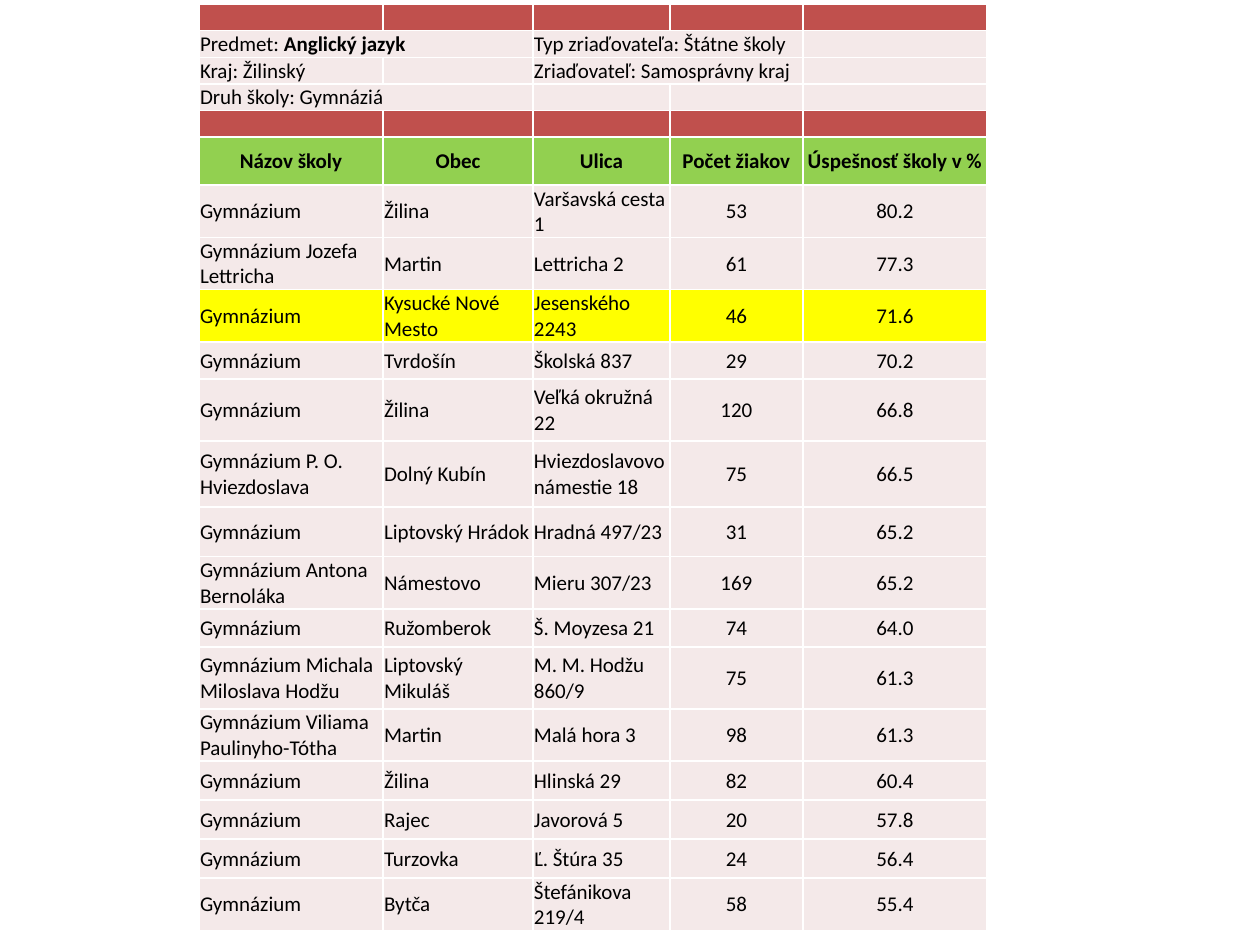
from dataclasses import dataclass

from lxml.etree import SubElement
from pptx import Presentation
from pptx.dml.color import RGBColor
from pptx.enum.text import MSO_ANCHOR, PP_ALIGN
from pptx.oxml import parse_xml
from pptx.oxml.ns import nsdecls, qn
from pptx.util import Pt

PX = 914400 // 126


@dataclass(frozen=True)
class Theme:
    font: str = "Calibri"
    size: int = 12
    text: str = "000000"
    band: str = "C0504D"
    header: str = "92D050"
    body: str = "F4E9E9"
    highlight: str = "FFFF00"
    border: str = "FFFFFF"
    border_width: int = 1


THEME = Theme()
SLIDE_WIDTH, SLIDE_HEIGHT = 1260, 945
TABLE_LEFT, TABLE_TOP = 199, 4
COLUMN_WIDTHS = [184, 150, 137, 133, 184]
INFO_HEIGHT, HEADER_HEIGHT = 25, 48

# Each entry: column, columns spanned, label, bold value
INFO_ROWS = [
    [(0, 2, "Predmet: ", "Anglický jazyk"),
     (2, 2, "Typ zriaďovateľa: Štátne školy", "")],
    [(0, 1, "Kraj: Žilinský", ""),
     (2, 2, "Zriaďovateľ: Samosprávny kraj", "")],
    [(0, 2, "Druh školy: Gymnáziá", "")],
]
HEADERS = ["Názov školy", "Obec", "Ulica", "Počet žiakov", "Úspešnosť školy v %"]

# Each entry: row height, then the cells
SCHOOLS = [
    (51, "Gymnázium", "Žilina", "Varšavská cesta 1", "53", "80.2"),
    (51, "Gymnázium Jozefa Lettricha", "Martin", "Lettricha 2", "61", "77.3"),
    (51, "Gymnázium", "Kysucké Nové Mesto", "Jesenského 2243", "46", "71.6"),
    (37, "Gymnázium", "Tvrdošín", "Školská 837", "29", "70.2"),
    (62, "Gymnázium", "Žilina", "Veľká okružná 22", "120", "66.8"),
    (66, "Gymnázium P. O. Hviezdoslava", "Dolný Kubín",
     "Hviezdoslavovo námestie 18", "75", "66.5"),
    (50, "Gymnázium", "Liptovský Hrádok", "Hradná 497/23", "31", "65.2"),
    (51, "Gymnázium Antona Bernoláka", "Námestovo", "Mieru 307/23", "169", "65.2"),
    (38, "Gymnázium", "Ružomberok", "Š. Moyzesa 21", "74", "64.0"),
    (62, "Gymnázium Michala Miloslava Hodžu", "Liptovský Mikuláš",
     "M. M. Hodžu 860/9", "75", "61.3"),
    (51, "Gymnázium Viliama Paulinyho-Tótha", "Martin", "Malá hora 3", "98", "61.3"),
    (39, "Gymnázium", "Žilina", "Hlinská 29", "82", "60.4"),
    (39, "Gymnázium", "Rajec", "Javorová 5", "20", "57.8"),
    (39, "Gymnázium", "Turzovka", "Ľ. Štúra 35", "24", "56.4"),
    (51, "Gymnázium", "Bytča", "Štefánikova 219/4", "58", "55.4"),
]
HIGHLIGHTED_TOWN = "Kysucké Nové Mesto"
FIRST_NUMBER_COLUMN = 3
HEADER_ROW = len(INFO_ROWS) + 2


def add_borders(cell):
    properties = cell._tc.get_or_add_tcPr()
    for position, side in enumerate(("lnL", "lnR", "lnT", "lnB")):
        properties.insert(position, parse_xml(
            f'<a:{side} {nsdecls("a")} w="{Pt(THEME.border_width)}"><a:solidFill>'
            f'<a:srgbClr val="{THEME.border}"/></a:solidFill></a:{side}>'))


def style_cell(cell, fill):
    cell.fill.solid()
    cell.fill.fore_color.rgb = RGBColor.from_string(fill)
    cell.margin_left = cell.margin_right = cell.margin_top = PX
    cell.margin_bottom = 0
    add_borders(cell)
    font = cell.text_frame.paragraphs[0].font
    font.name, font.size = THEME.font, Pt(THEME.size)
    font.color.rgb = RGBColor.from_string(THEME.text)


def write_cell(cell, text, bold=False, centred=False, anchor=MSO_ANCHOR.MIDDLE):
    cell.vertical_anchor = anchor
    paragraph = cell.text_frame.paragraphs[0]
    paragraph.alignment = PP_ALIGN.CENTER if centred else PP_ALIGN.LEFT
    paragraph.font.bold = bold
    paragraph.add_run().text = text
    return paragraph


def keep_empty_cell_small(cell):
    """Give an empty cell the table's type size so that its row does not grow."""
    paragraph = cell.text_frame.paragraphs[0]
    SubElement(paragraph._p, qn("a:endParaRPr"), sz=str(THEME.size * 100))


def fill_info_rows(table):
    for row, entries in enumerate(INFO_ROWS, start=1):
        for column, span, label, value in entries:
            cell = table.cell(row, column)
            if span > 1:
                cell.merge(table.cell(row, column + span - 1))
            paragraph = write_cell(cell, label, anchor=MSO_ANCHOR.BOTTOM)
            if value:
                run = paragraph.add_run()
                run.text, run.font.bold = value, True


def fill_school_rows(table):
    for column, header in enumerate(HEADERS):
        write_cell(table.cell(HEADER_ROW, column), header, bold=True, centred=True)
    for row, (_, *values) in enumerate(SCHOOLS, start=HEADER_ROW + 1):
        for column, value in enumerate(values):
            write_cell(table.cell(row, column), value,
                       centred=column >= FIRST_NUMBER_COLUMN)


def main():
    presentation = Presentation()
    presentation.slide_width = SLIDE_WIDTH * PX
    presentation.slide_height = SLIDE_HEIGHT * PX
    slide = presentation.slides.add_slide(presentation.slide_layouts[6])

    heights = ([INFO_HEIGHT] * HEADER_ROW + [HEADER_HEIGHT]
               + [school[0] for school in SCHOOLS])
    fills = ([THEME.band] + [THEME.body] * len(INFO_ROWS) + [THEME.band, THEME.header]
             + [THEME.highlight if HIGHLIGHTED_TOWN in school else THEME.body
                for school in SCHOOLS])
    table = slide.shapes.add_table(
        len(heights), len(COLUMN_WIDTHS), TABLE_LEFT * PX, TABLE_TOP * PX,
        sum(COLUMN_WIDTHS) * PX, sum(heights) * PX).table
    table.first_row = table.horz_banding = False
    for column, width in zip(table.columns, COLUMN_WIDTHS):
        column.width = width * PX
    for row, height, fill in zip(table.rows, heights, fills):
        row.height = height * PX
        for cell in row.cells:
            style_cell(cell, fill)

    fill_info_rows(table)
    fill_school_rows(table)
    for cell in table.iter_cells():
        if not cell.text_frame.text:
            keep_empty_cell_small(cell)
    presentation.save("out.pptx")


if __name__ == "__main__":
    main()
